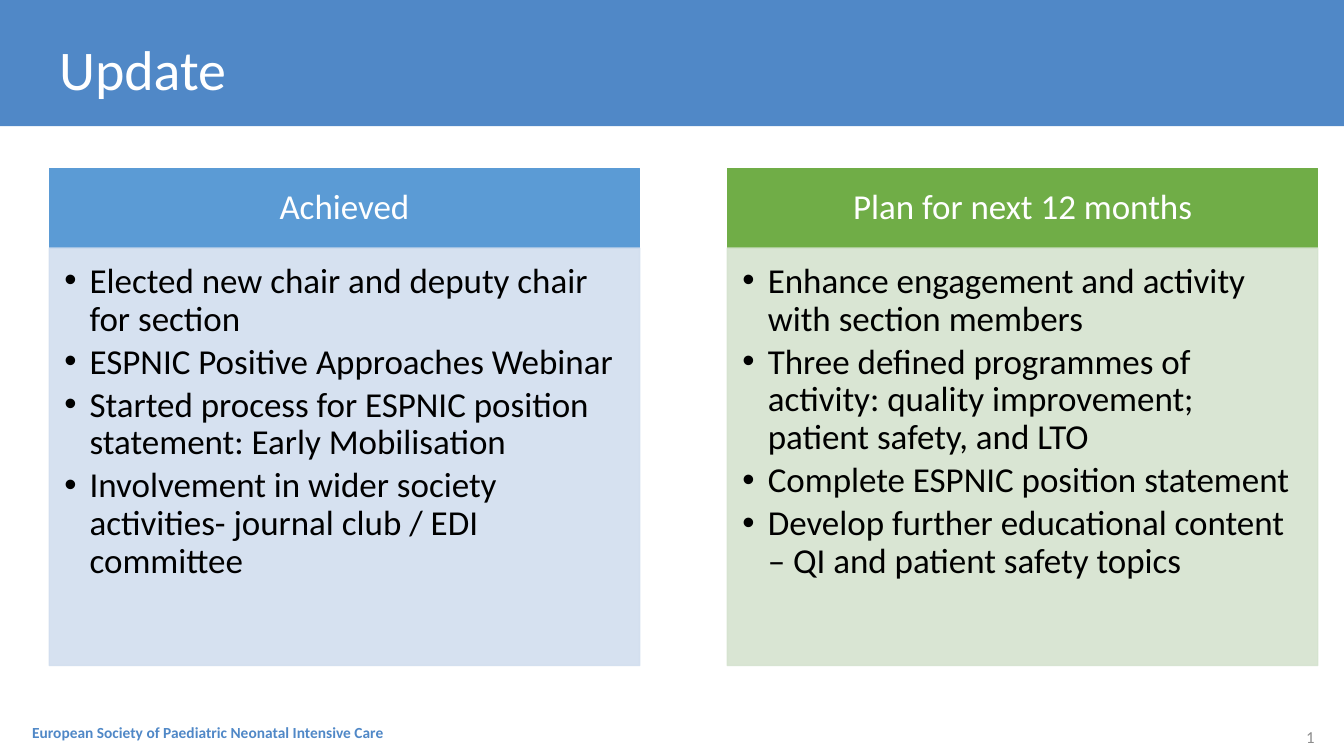
from lxml import etree
from pptx import Presentation
from pptx.dml.color import RGBColor
from pptx.enum.shapes import MSO_SHAPE
from pptx.enum.text import MSO_ANCHOR, MSO_AUTO_SIZE, PP_ALIGN
from pptx.oxml.ns import qn
from pptx.util import Cm, Pt

LEFT, CENTER, RIGHT = PP_ALIGN.LEFT, PP_ALIGN.CENTER, PP_ALIGN.RIGHT
TOP, MIDDLE, BOTTOM = MSO_ANCHOR.TOP, MSO_ANCHOR.MIDDLE, MSO_ANCHOR.BOTTOM
FIXED = MSO_AUTO_SIZE.NONE
COMPARISON_LAYOUT = 4

TITLE = "Update"
FOOTER = "European Society of Paediatric Neonatal Intensive Care"
COLUMNS = [
    {
        "heading": "Achieved",
        "heading_fill": "5B9BD5",
        "body_fill": "D2DEEF",
        "items": [
            "Elected new chair and deputy chair for section",
            "ESPNIC Positive Approaches Webinar",
            "Started process for ESPNIC position statement: Early Mobilisation",
            "Involvement in wider society activities- journal club / EDI committee",
        ],
    },
    {
        "heading": "Plan for next 12 months",
        "heading_fill": "70AD47",
        "body_fill": "D5E3CF",
        "items": [
            "Enhance engagement and activity with section members",
            "Three defined programmes of activity: quality improvement; patient safety, and LTO",
            "Complete ESPNIC position statement",
            "Develop further educational content – QI and patient safety topics",
        ],
    },
]

SLIDE_WIDTH, SLIDE_HEIGHT = 33.87, 19.05
BRAND_BLUE, WHITE, BLACK, GREY = "5088C7", "FFFFFF", "000000", "8C8C8C"
MARGIN, COLUMN_WIDTH, COLUMN_STEP = 1.24, 14.88, 17.09
HEADING_TOP, HEADING_HEIGHT, BODY_HEIGHT = 4.24, 2.01, 10.52
HEADING_INSETS = (0.48, 0.28, 0.48, 0.28)
BODY_INSETS = (0.38, 0.38, 0.48, 0.56)
DEFAULT_INSETS = (0.25, 0.13, 0.25, 0.13)


def color(hex_string):
    return RGBColor.from_string(hex_string)


def place(shape, left, top, width, height):
    shape.left, shape.top = Cm(left), Cm(top)
    shape.width, shape.height = Cm(width), Cm(height)


def paint(shape, hex_string, opacity=100):
    """Give fill and outline the same colour."""
    shape.fill.solid()
    shape.fill.fore_color.rgb = color(hex_string)
    shape.line.color.rgb = color(hex_string)
    shape.line.width = Pt(1)
    if opacity < 100:
        for element in shape.element.spPr.iter(qn("a:srgbClr")):
            etree.SubElement(element, qn("a:alpha"), val=str(opacity * 1000))


def write(shape, lines, size, text_color, bold=False, align=LEFT, anchor=TOP,
          insets=DEFAULT_INSETS, line_spacing=1.0, space_after=0, hanging=0):
    frame = shape.text_frame
    frame.word_wrap = True
    frame.auto_size = FIXED
    frame.vertical_anchor = anchor
    (frame.margin_left, frame.margin_top,
     frame.margin_right, frame.margin_bottom) = map(Cm, insets)
    frame.text = "\n".join(lines)
    for paragraph in frame.paragraphs:
        paragraph.alignment = align
        paragraph.line_spacing = line_spacing
        paragraph.space_before = Pt(0)
        paragraph.space_after = Pt(space_after)
        if hanging:
            properties = paragraph._p.get_or_add_pPr()
            properties.set("marL", str(Cm(hanging)))
            properties.set("indent", str(-Cm(hanging)))
        for run in paragraph.runs:
            run.font.name = "Calibri"
            run.font.size = Pt(size)
            run.font.bold = bold
            run.font.color.rgb = color(text_color)


def add_text(slide, box, lines, **text_format):
    shape = slide.shapes.add_textbox(*map(Cm, box))
    write(shape, lines, **text_format)
    return shape


def make_slide_number_field(shape):
    """Turn the only run of the shape into a slide number field."""
    run = shape.text_frame.paragraphs[0].runs[0]._r
    field = etree.Element(qn("a:fld"), type="slidenum",
                          id="{B6F15528-21DE-4FAA-801E-634DDDAF4B2B}")
    run.addprevious(field)
    field.extend(list(run))
    run.getparent().remove(run)


def add_banner(slide):
    banner = slide.shapes.add_shape(
        MSO_SHAPE.RECTANGLE, 0, 0, Cm(SLIDE_WIDTH), Cm(3.18))
    banner.shadow.inherit = False
    banner.fill.solid()
    banner.fill.fore_color.rgb = color(BRAND_BLUE)
    banner.line.fill.background()
    slide.shapes.title.element.addprevious(banner.element)


def fill_column(heading, body, column, left):
    place(heading, left, HEADING_TOP, COLUMN_WIDTH, HEADING_HEIGHT)
    paint(heading, column["heading_fill"])
    write(heading, [column["heading"]], 25, WHITE, align=CENTER, anchor=MIDDLE,
          insets=HEADING_INSETS, line_spacing=0.9)
    place(body, left, HEADING_TOP + HEADING_HEIGHT, COLUMN_WIDTH, BODY_HEIGHT)
    paint(body, column["body_fill"], opacity=90)
    write(body, column["items"], 25, BLACK, insets=BODY_INSETS,
          line_spacing=0.9, space_after=3.75, hanging=0.64)


def main():
    presentation = Presentation()
    presentation.slide_width = Cm(SLIDE_WIDTH)
    presentation.slide_height = Cm(SLIDE_HEIGHT)
    slide = presentation.slides.add_slide(
        presentation.slide_layouts[COMPARISON_LAYOUT])

    add_banner(slide)
    title = slide.shapes.title
    place(title, MARGIN, 0.28, 20.17, 2.44)
    write(title, [TITLE], 40, WHITE, anchor=BOTTOM, line_spacing=0.9)

    for index, column in enumerate(COLUMNS):
        heading = slide.placeholders[2 * index + 1]
        body = slide.placeholders[2 * index + 2]
        fill_column(heading, body, column, MARGIN + index * COLUMN_STEP)

    add_text(slide, (0.56, 18.08, 21.84, 0.74), [FOOTER],
             size=11, text_color=BRAND_BLUE, bold=True)
    number = add_text(slide, (25.76, 18.06, 7.62, 1.02), ["1"], size=12,
                      text_color=GREY, align=RIGHT, anchor=MIDDLE)
    make_slide_number_field(number)
    presentation.save("out.pptx")


if __name__ == "__main__":
    main()
